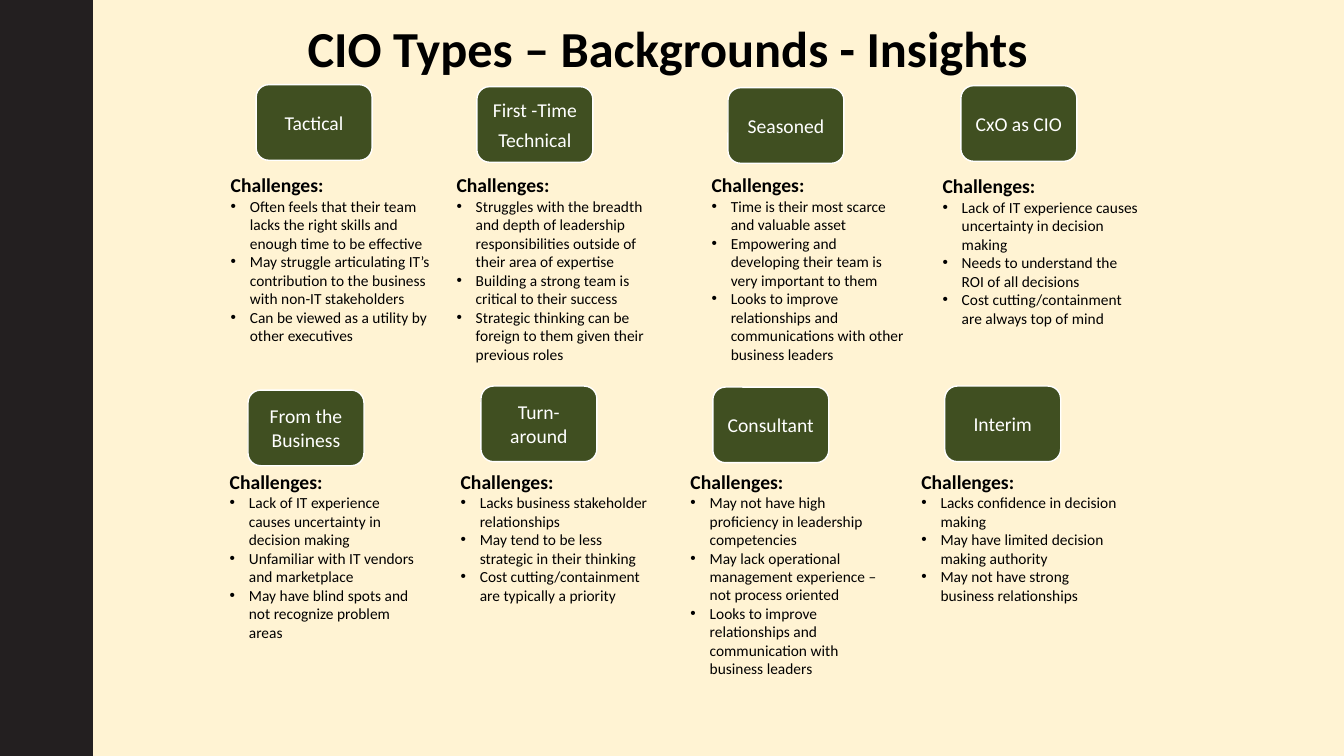
from pptx import Presentation, util as u
from pptx.dml.color import RGBColor
from pptx.enum import shapes, text
from pptx.oxml import parse_xml
from pptx.oxml.ns import nsdecls

THEME = {
    "background": RGBColor.from_string("FFF3D3"),
    "bar": RGBColor.from_string("231F20"),
    "card": RGBColor.from_string("404F21"),
    "title": {"name": "Calibri", "size": u.Pt(36), "bold": True, "color": RGBColor(0, 0, 0)},
    "label": {"name": "Calibri", "size": u.Pt(14), "bold": False, "color": RGBColor(255, 255, 255)},
    "heading": {"name": "Calibri", "size": u.Pt(14), "bold": True, "color": RGBColor(0, 0, 0)},
    "bullet": {"name": "Calibri", "size": u.Pt(11), "bold": False, "color": RGBColor(0, 0, 0)},
}

CIO_TYPES = [
    (["Tactical"], (2.54, 0.84), (2.19, 1.67, 2.24, 2.0), [
        "Often feels that their team lacks the right skills and enough time to be effective",
        "May struggle articulating IT’s contribution to the business with non-IT stakeholders",
        "Can be viewed as a utility by other executives"]),
    (["First -Time", "Technical"], (4.73, 0.86), (4.43, 1.67, 2.21, 2.19), [
        "Struggles with the breadth and depth of leadership responsibilities outside of their area of expertise",
        "Building a strong team is critical to their success",
        "Strategic thinking can be foreign to them given their previous roles"]),
    (["Seasoned"], (7.22, 0.87), (6.96, 1.67, 2.14, 2.19), [
        "Time is their most scarce and valuable asset",
        "Empowering and developing their team is very important to them",
        "Looks to improve relationships and communications with other business leaders"]),
    (["CxO as CIO"], (9.53, 0.85), (9.25, 1.68, 2.14, 1.82), [
        "Lack of IT experience causes uncertainty in decision making",
        "Needs to understand the ROI of all decisions",
        "Cost cutting/containment are always top of mind"]),
    (["From the Business"], (2.46, 3.87), (2.18, 4.61, 2.11, 1.99), [
        "Lack of IT experience causes uncertainty in decision making",
        "Unfamiliar with IT vendors and marketplace",
        "May have blind spots and not recognize problem areas"]),
    (["Turn-around"], (4.77, 3.83), (4.47, 4.61, 2.11, 1.62), [
        "Lacks business stakeholder relationships",
        "May tend to be less strategic in their thinking",
        "Cost cutting/containment are typically a priority"]),
    (["Consultant"], (7.07, 3.84), (6.75, 4.61, 2.11, 2.36), [
        "May not have high proficiency in leadership competencies",
        "May lack operational management experience – not process oriented",
        "Looks to improve relationships and communication with business leaders"]),
    (["Interim"], (9.37, 3.83), (9.04, 4.61, 2.14, 1.62), [
        "Lacks confidence in decision making",
        "May have limited decision making authority",
        "May not have strong business relationships"]),
]


def add_text(tf, i, content, style):
    p = tf.paragraphs[0] if i == 0 else tf.add_paragraph()
    r = p.add_run()
    r.text = content
    for key, value in THEME[style].items():
        if key == "color":
            r.font.color.rgb = value
        else:
            setattr(r.font, key, value)
    return p


def add_block(s, kind, box, fill, line):
    sp = s.shapes.add_shape(kind, *map(u.Inches, box))
    sp.shadow.inherit = False
    sp.fill.solid()
    sp.fill.fore_color.rgb = fill
    sp.line.color.rgb = line
    sp.line.width = u.Pt(1)
    return sp


prs = Presentation()
prs.slide_width, prs.slide_height = u.Inches(13.33), u.Inches(7.5)
s = prs.slides.add_slide(prs.slide_layouts[5])
s.background.fill.solid()
s.background.fill.fore_color.rgb = THEME["background"]

add_block(s, shapes.MSO_SHAPE.RECTANGLE, (0, 0, 0.92, 7.5), THEME["bar"], THEME["bar"])

title = s.shapes.title
title.left, title.top, title.width, title.height = map(u.Inches, (2.95, 0.12, 7.44, 0.71))
tf = title.text_frame
tf.auto_size = text.MSO_AUTO_SIZE.NONE
tf.vertical_anchor = text.MSO_ANCHOR.TOP
p = add_text(tf, 0, "CIO Types – Backgrounds - Insights", "title")
p.alignment = text.PP_ALIGN.LEFT

for label, card_at, list_box, challenges in CIO_TYPES:
    card = add_block(s, shapes.MSO_SHAPE.ROUNDED_RECTANGLE, (*card_at, 1.15, 0.75),
                     THEME["card"], THEME["label"]["color"])
    tf = card.text_frame
    tf.word_wrap = True
    tf.vertical_anchor = text.MSO_ANCHOR.MIDDLE
    for side in ("left", "top", "right", "bottom"):
        setattr(tf, f"margin_{side}", u.Inches(0.08))
    for i, line in enumerate(label):
        p = add_text(tf, i, line, "label")
        p.alignment = text.PP_ALIGN.CENTER
        p.space_after = u.Pt(5)

    tf = s.shapes.add_textbox(*map(u.Inches, list_box)).text_frame
    tf.word_wrap = True
    tf.auto_size = text.MSO_AUTO_SIZE.SHAPE_TO_FIT_TEXT
    add_text(tf, 0, "Challenges:", "heading")
    for i, challenge in enumerate(challenges, 1):
        p = add_text(tf, i, challenge, "bullet")
        pPr = p._p.get_or_add_pPr()
        pPr.set("marL", str(u.Inches(0.19)))
        pPr.set("indent", str(-u.Inches(0.19)))
        pPr.append(parse_xml(f'<a:buFont {nsdecls("a")} typeface="Arial"/>'))
        pPr.append(parse_xml(f'<a:buChar {nsdecls("a")} char="•"/>'))

prs.save("out.pptx")
